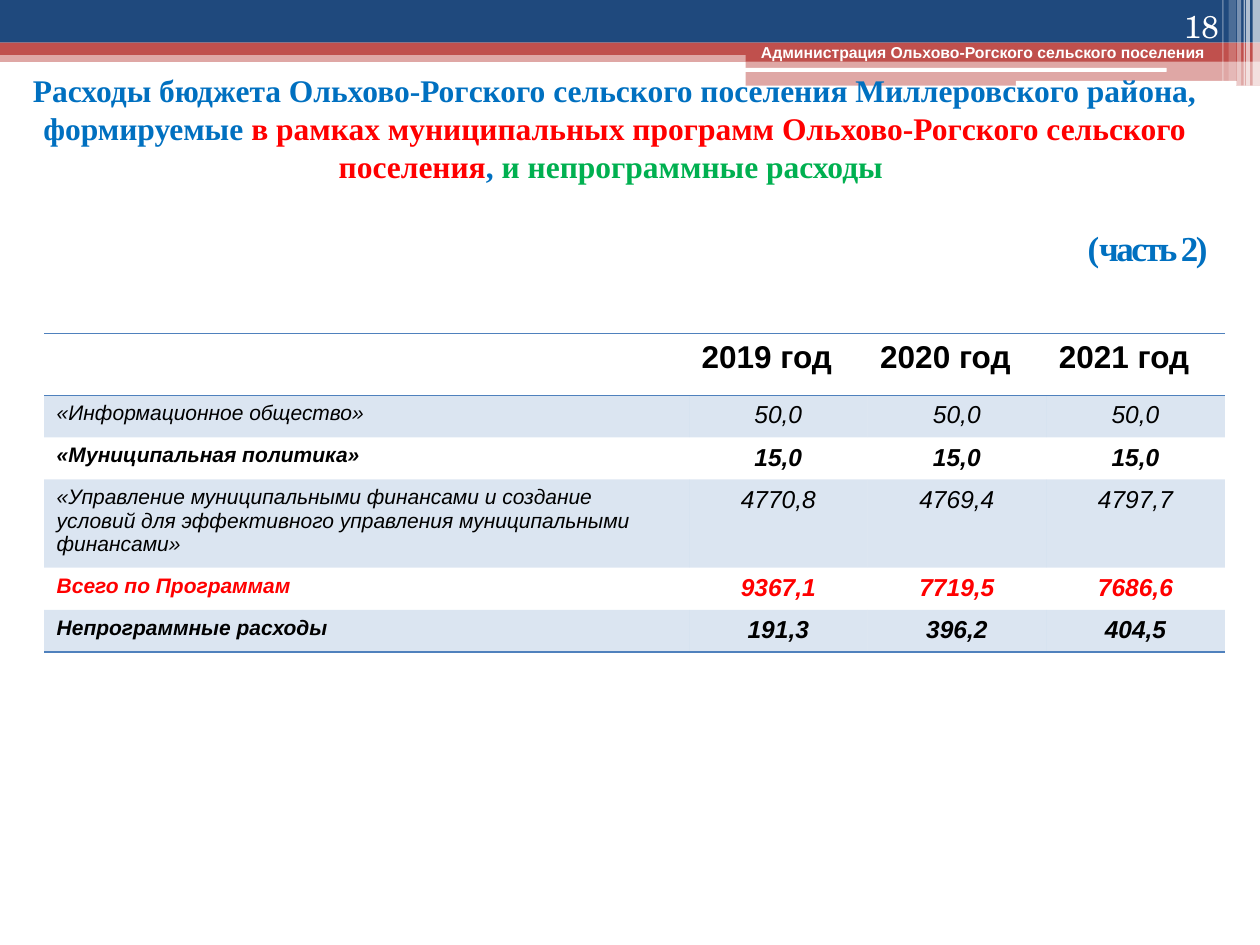
from dataclasses import dataclass

from lxml.etree import SubElement
from pptx import Presentation
from pptx.dml.color import RGBColor
from pptx.enum.shapes import MSO_SHAPE
from pptx.enum.text import MSO_ANCHOR, MSO_AUTO_SIZE, PP_ALIGN
from pptx.oxml import parse_xml
from pptx.oxml.ns import nsdecls, qn
from pptx.util import Cm, Pt

NAVY = RGBColor(0x1F, 0x49, 0x7D)
BRICK = RGBColor(0xC0, 0x50, 0x4D)
STEEL = RGBColor(0x4F, 0x81, 0xBD)
BLUE = RGBColor(0x00, 0x70, 0xC0)
RED = RGBColor(0xFF, 0x00, 0x00)
GREEN = RGBColor(0x00, 0xB0, 0x50)
WHITE = RGBColor(0xFF, 0xFF, 0xFF)
BLACK = RGBColor(0x00, 0x00, 0x00)

SANS, SERIF, NUMERAL = "Arial", "Times New Roman", "TeX Gyre Schola"
PLAIN_TABLE = "{2D5ABB26-0587-4C30-8999-92F81FD0307C}"


@dataclass
class Band:
    left: float
    top: float
    width: float
    height: float
    color: RGBColor
    opacity: int = 100
    rounded: bool = False


@dataclass
class BudgetRow:
    label: str
    amounts: tuple[str, ...]
    height: float = 0.81
    bold: bool = True
    color: RGBColor = BLACK


BANDS = [
    Band(0, 1.02, 25.4, 0.23, BRICK, 50),
    Band(0, 0, 25.4, 0.86, NAVY),
    Band(0, 0.86, 25.4, 0.25, BRICK),
    Band(15.03, 0.99, 10.37, 0.25, BRICK),
    Band(15.03, 1.23, 10.37, 0.5, BRICK, 50),
    Band(15.01, 1.37, 8.51, 0.08, WHITE, rounded=True),
    Band(20.48, 1.63, 4.45, 0.1, WHITE, rounded=True),
    Band(25.25, 0, 0.15, 1.73, WHITE, 65),
    Band(25.12, 0, 0.08, 1.73, WHITE, 65),
    Band(25.07, 0, 0.03, 1.73, WHITE, 60),
    Band(24.94, 0, 0.08, 1.73, WHITE, 40),
    Band(24.77, 0, 0.15, 1.63, WHITE, 20),
    Band(24.64, 0, 0.03, 1.63, WHITE, 30),
]

YEARS = ("2019 год", "2020 год", "2021 год")
BUDGET = [
    BudgetRow("«Информационное общество»", ("50,0",) * 3, bold=False),
    BudgetRow("«Муниципальная политика»", ("15,0",) * 3),
    BudgetRow("«Управление муниципальными финансами и создание условий для "
              "эффективного управления муниципальными финансами»",
              ("4770,8", "4769,4", "4797,7"), height=1.68, bold=False),
    BudgetRow("Всего по Программам", ("9367,1", "7719,5", "7686,6"), color=RED),
    BudgetRow("Непрограммные расходы", ("191,3", "396,2", "404,5")),
]
COLUMN_WIDTHS = (13, 3.6, 3.6, 3.6)
HEADER_HEIGHT = 1.25


def add_run(paragraph, text: str, size: float, color: RGBColor, face: str = SANS,
            bold: bool = False, italic: bool = False):
    run = paragraph.add_run()
    run.text = text
    font = run.font
    font.name, font.size, font.bold, font.italic = face, Pt(size), bold, italic
    font.color.rgb = color
    return run


def set_opacity(element, percent: int) -> None:
    for color in element.iter(qn("a:srgbClr")):
        SubElement(color, qn("a:alpha")).set("val", str(percent * 1000))


def draw_band(slide, band: Band) -> None:
    outline = MSO_SHAPE.ROUNDED_RECTANGLE if band.rounded else MSO_SHAPE.RECTANGLE
    shape = slide.shapes.add_shape(outline, Cm(band.left), Cm(band.top),
                                   Cm(band.width), Cm(band.height))
    shape.shadow.inherit = False
    shape.line.fill.background()
    shape.fill.solid()
    shape.fill.fore_color.rgb = band.color
    if band.opacity < 100:
        set_opacity(shape.element, band.opacity)


def draw_title(slide) -> None:
    title = slide.shapes.title
    title.left, title.top, title.width, title.height = Cm(0), Cm(1.73), Cm(24.79), Cm(3.4)
    slide.shapes.element.append(title.element)
    frame = title.text_frame
    frame.auto_size = MSO_AUTO_SIZE.NONE
    frame.vertical_anchor = MSO_ANCHOR.MIDDLE

    heading = frame.paragraphs[0]
    heading.alignment = PP_ALIGN.CENTER
    for text, color in (
        ("Расходы бюджета Ольхово-Рогского сельского поселения "
         "Миллеровского района, формируемые ", BLUE),
        ("в рамках муниципальных программ Ольхово-Рогского сельского поселения", RED),
        (", ", BLUE),
        ("и непрограммные расходы ", GREEN),
    ):
        add_run(heading, text, 18, color, SERIF, bold=True)

    part = frame.add_paragraph()
    part.alignment = PP_ALIGN.LEFT
    part.space_before = Pt(24)
    properties = part._p.get_or_add_pPr()
    properties.set("marL", str(Cm(21.67)))
    properties.set("indent", "0")
    add_run(part, "(", 20, BLUE, SERIF, bold=True)
    tight = add_run(part, "часть 2)", 20, BLUE, SERIF, bold=True)
    tight.font._element.set("spc", "-150")


def draw_caption(slide, text: str, box: tuple[float, ...], size: float, face: str,
                 bold: bool, align: PP_ALIGN, anchor: MSO_ANCHOR) -> None:
    frame = slide.shapes.add_textbox(*map(Cm, box)).text_frame
    frame.word_wrap = True
    frame.vertical_anchor = anchor
    paragraph = frame.paragraphs[0]
    paragraph.alignment = align
    add_run(paragraph, text, size, WHITE, face, bold=bold)


def style_cell(cell, shaded: bool, edges: tuple[str, ...]) -> None:
    if shaded:
        cell.fill.solid()
        cell.fill.fore_color.rgb = STEEL
        set_opacity(cell._tc, 20)
    else:
        cell.fill.background()
    for position, edge in enumerate(edges):
        cell._tc.get_or_add_tcPr().insert(position, parse_xml(
            f'<a:{edge} {nsdecls("a")} w="{Pt(1)}"><a:solidFill>'
            f'<a:srgbClr val="{STEEL}"/></a:solidFill></a:{edge}>'))


def draw_budget(slide) -> None:
    heights = [HEADER_HEIGHT] + [row.height for row in BUDGET]
    frame = slide.shapes.add_table(len(heights), len(COLUMN_WIDTHS), Cm(0.89), Cm(6.72),
                                   Cm(sum(COLUMN_WIDTHS)), Cm(sum(heights)))
    table = frame.table
    table.first_row = table.horz_banding = False
    table._tbl.tblPr.find(qn("a:tableStyleId")).text = PLAIN_TABLE
    for column, width in zip(table.columns, COLUMN_WIDTHS):
        column.width = Cm(width)
    for index, height in enumerate(heights):
        table.rows[index].height = Cm(height)
        edges = ("lnT", "lnB") if index == 0 else ("lnB",) if index == len(BUDGET) else ()
        for cell in table.rows[index].cells:
            style_cell(cell, index % 2 == 1, edges)

    for column, year in enumerate(YEARS, 1):
        add_run(table.cell(0, column).text_frame.paragraphs[0], year, 18, BLACK, bold=True)
    for index, row in enumerate(BUDGET, 1):
        for column, text in enumerate((row.label, *row.amounts)):
            paragraph = table.cell(index, column).text_frame.paragraphs[0]
            paragraph.alignment = PP_ALIGN.CENTER if column else PP_ALIGN.LEFT
            add_run(paragraph, text, 14 if column else 12, row.color,
                    bold=row.bold, italic=True)


def main() -> None:
    deck = Presentation()
    deck.slide_width, deck.slide_height = Cm(25.4), Cm(19.05)
    slide = deck.slides.add_slide(deck.slide_layouts[5])
    for band in BANDS:
        draw_band(slide, band)
    draw_caption(slide, "Администрация Ольхово-Рогского сельского поселения",
                 (15.09, 0.74, 9.6, 0.64), 9, SANS, True, PP_ALIGN.LEFT, MSO_ANCHOR.TOP)
    draw_title(slide)
    draw_caption(slide, "18", (22.71, 0, 2.11, 1.02), 18, NUMERAL, False,
                 PP_ALIGN.RIGHT, MSO_ANCHOR.BOTTOM)
    draw_budget(slide)
    deck.save("out.pptx")


if __name__ == "__main__":
    main()
